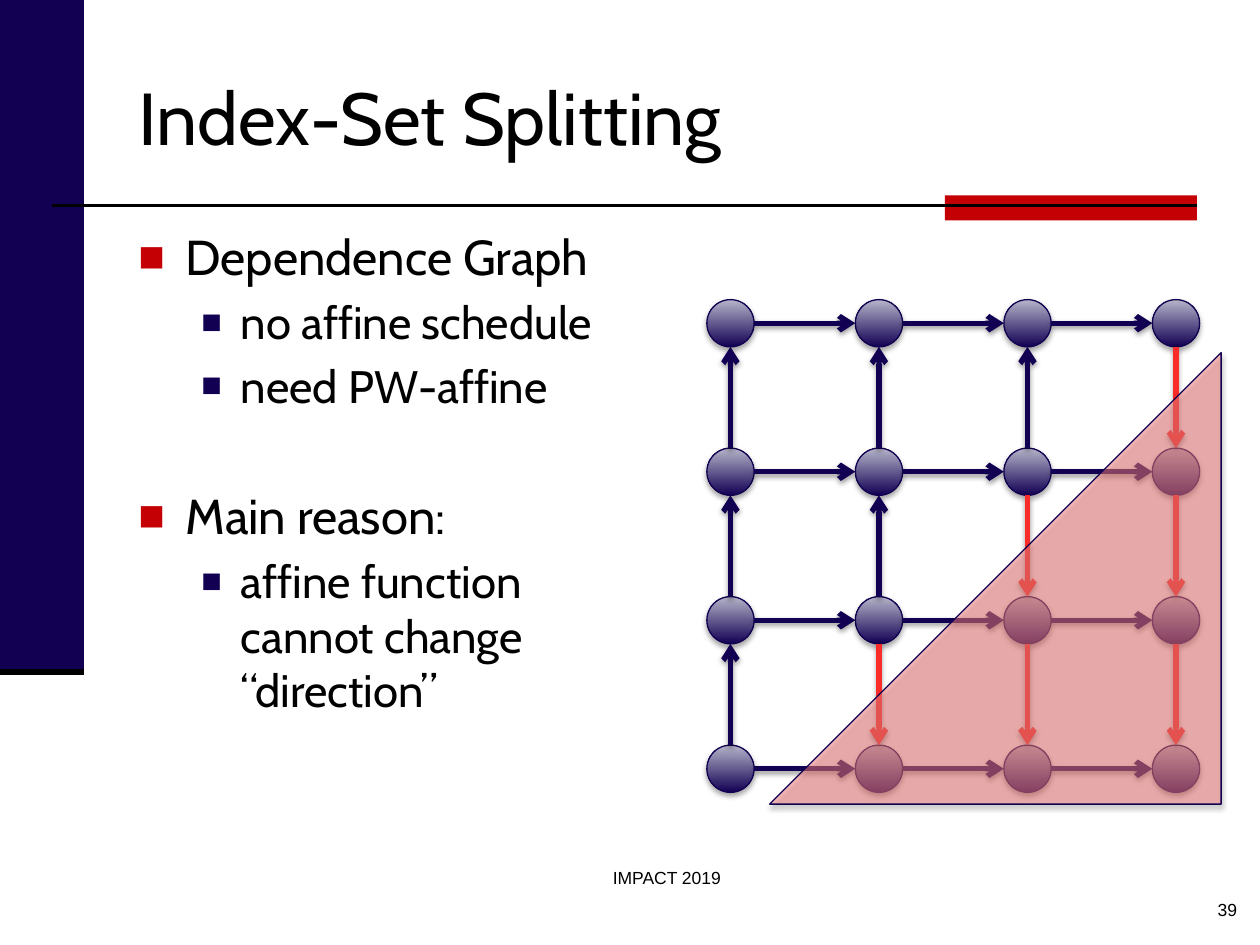
from lxml import etree
from pptx import Presentation
from pptx.dml.color import RGBColor
from pptx.enum.shapes import MSO_CONNECTOR, MSO_SHAPE
from pptx.enum.text import MSO_ANCHOR, MSO_AUTO_SIZE, PP_ALIGN
from pptx.oxml import parse_xml
from pptx.oxml.ns import nsdecls, qn
from pptx.util import Pt

NAVY = RGBColor(0x12, 0x00, 0x53)
OUTLINE = RGBColor(0x12, 0x00, 0x51)
LAVENDER = RGBColor(0xB6, 0xB5, 0xCA)
CRIMSON = RGBColor(0xC4, 0x00, 0x05)
RED = RGBColor(0xF9, 0x2C, 0x29)
PINK = RGBColor(0xFB, 0x80, 0x7F)
BLACK = RGBColor(0, 0, 0)
STRAIGHT = MSO_CONNECTOR.STRAIGHT
RECT, OVAL, TRIANGLE = MSO_SHAPE.RECTANGLE, MSO_SHAPE.OVAL, MSO_SHAPE.RIGHT_TRIANGLE
LEFT, CENTER, RIGHT = PP_ALIGN.LEFT, PP_ALIGN.CENTER, PP_ALIGN.RIGHT

GRID_SIZE = 4
NODE = 27
BULLETS = [
    ("Dependence Graph", 0, 0),
    ("no affine schedule", 1, 5),
    ("need PW-affine", 1, 5),
    ("Main reason:", 0, 42),
    ("affine function\vcannot change\v“direction”", 1, 5),
]
LEVELS = [
    dict(size=28, indent=27, hang=27, bullet=CRIMSON, bullet_size=90),
    dict(size=26, indent=58.5, hang=22.5, bullet=NAVY, bullet_size=75),
]


def add_effects(s, alpha=None, dist=1.8):
    shadow = ""
    if alpha:
        shadow = (f'<a:outerShdw blurRad="{Pt(3.1)}" dist="{Pt(dist)}" dir="5400000" '
                  f'rotWithShape="0"><a:srgbClr val="000000">'
                  f'<a:alpha val="{alpha * 1000}"/></a:srgbClr></a:outerShdw>')
    s._element.spPr.append(
        parse_xml(f'<a:effectLst {nsdecls("a")}>{shadow}</a:effectLst>'))


def add_bullet(p, indent, hang, color, percent):
    pPr = p._p.get_or_add_pPr()
    pPr.set("marL", str(Pt(indent)))
    pPr.set("indent", str(-Pt(hang)))
    clr = etree.SubElement(pPr, qn("a:buClr"))
    etree.SubElement(clr, qn("a:srgbClr"), val=str(color))
    etree.SubElement(pPr, qn("a:buSzPct"), val=str(percent * 1000))
    etree.SubElement(pPr, qn("a:buFont"), typeface="Arial")
    etree.SubElement(pPr, qn("a:buChar"), char="■")


def write_text(p, text, size=10, font="Arial", color=BLACK, align=LEFT, before=0,
               indent=0, hang=0, bullet=None, bullet_size=100):
    if bullet is not None:
        add_bullet(p, indent, hang, bullet, bullet_size)
    p.text = text
    p.alignment = align
    p.space_before = Pt(before)
    for r in p.runs:
        r.font.size = Pt(size)
        r.font.name = font
        r.font.color.rgb = color


def add_text_frame(slide, x, y, w, h):
    tf = slide.shapes.add_textbox(Pt(x), Pt(y), Pt(w), Pt(h)).text_frame
    tf.word_wrap = True
    return tf


def add_bar(slide, x, y, w, h, color):
    s = slide.shapes.add_shape(RECT, Pt(x), Pt(y), Pt(w), Pt(h))
    s.shadow.inherit = False
    s.fill.solid()
    s.fill.fore_color.rgb = color
    s.line.fill.background()


def add_line(slide, x1, y1, x2, y2, color, width):
    s = slide.shapes.add_connector(STRAIGHT, Pt(x1), Pt(y1), Pt(x2), Pt(y2))
    s.line.color.rgb = color
    s.line.width = Pt(width)
    return s


def add_arrow(slide, x1, y1, x2, y2, color):
    s = add_line(slide, x1, y1, x2, y2, color, 3)
    etree.SubElement(s.line._get_or_add_ln(), qn("a:tailEnd"), type="arrow")
    add_effects(s, alpha=38, dist=1.6)


def add_node(slide, x, y):
    s = slide.shapes.add_shape(OVAL, Pt(x), Pt(y), Pt(NODE), Pt(NODE))
    s.fill.gradient()
    s.fill.gradient_angle = 90
    for stop, color in zip(s.fill.gradient_stops, (NAVY, LAVENDER)):
        stop.color.rgb = color
    s.line.color.rgb = OUTLINE
    s.line.width = Pt(0.75)
    add_effects(s, alpha=35)


def add_decoration(slide, x, y, w):
    add_bar(slide, x, y, 48, 384, NAVY)
    add_bar(slide, x + w - 180, y + 111.6, 144, 14.4, CRIMSON)
    for line in ((x + 30, y + 117.5, x + w - 36, y + 117.5, BLACK, 1.5),
                 (x, y + 384, x + 48, y + 384, BLACK, 3.5)):
        add_effects(add_line(slide, *line))


def add_title(slide, x, y, w, h):
    s = slide.shapes.title
    s.left, s.top, s.width, s.height = Pt(x), Pt(y), Pt(w), Pt(h)
    tf = s.text_frame
    tf.auto_size = MSO_AUTO_SIZE.NONE
    tf.vertical_anchor = MSO_ANCHOR.MIDDLE
    write_text(tf.paragraphs[0], "Index-Set Splitting", size=42, font="Cabin")


def add_body(slide, x, y, w, h):
    tf = add_text_frame(slide, x, y, w, h)
    for i, (text, level, before) in enumerate(BULLETS):
        p = tf.add_paragraph() if i else tf.paragraphs[0]
        p.level = level
        write_text(p, text, font="Cabin", before=before, **LEVELS[level])


def add_dependence_graph(slide, x, y, size):
    pitch = (size - NODE) / (GRID_SIZE - 1)
    half = NODE / 2
    cells = [(row, col) for row in range(GRID_SIZE) for col in range(GRID_SIZE)]
    for row, col in cells:
        add_node(slide, x + col * pitch, y + row * pitch)
    for row, col in cells:
        cx, cy = x + col * pitch + half, y + row * pitch + half
        if col < GRID_SIZE - 1:
            add_arrow(slide, cx + half, cy, cx + pitch - half, cy, NAVY)
        if row < GRID_SIZE - 1:
            upper, lower = cy + half, cy + pitch - half
            if row + col >= GRID_SIZE - 1:
                add_arrow(slide, cx, upper, cx, lower, RED)
            else:
                add_arrow(slide, cx, lower, cx, upper, NAVY)


def add_split_region(slide, x, y, size):
    s = slide.shapes.add_shape(TRIANGLE, Pt(x), Pt(y), Pt(size), Pt(size))
    s.rotation = 270
    s.fill.solid()
    s.fill.fore_color.rgb = PINK
    color = s._element.spPr.find(qn("a:solidFill")).find(qn("a:srgbClr"))
    etree.SubElement(color, qn("a:alpha"), val="50000")
    s.line.color.rgb = OUTLINE
    s.line.width = Pt(0.75)
    add_effects(s, alpha=35)


def add_footer(slide, x, y, w, h, text, align):
    tf = add_text_frame(slide, x, y, w, h)
    write_text(tf.paragraphs[0], text, align=align)


def main():
    prs = Presentation()
    prs.slide_width, prs.slide_height = Pt(720), Pt(540)
    slide = prs.slides.add_slide(prs.slide_layouts[5])
    add_decoration(slide, 0, 0, 720)
    add_title(slide, 72, 21.6, 612, 90)
    add_body(slide, 72, 126, 612, 356.4)
    add_dependence_graph(slide, 403.9, 171.2, 281.6)
    add_split_region(slide, 439.8, 201.5, 258)
    add_footer(slide, 264, 492, 234, 36, "IMPACT 2019", CENTER)
    add_footer(slide, 564, 510, 150, 18, "39", RIGHT)
    prs.save("out.pptx")


if __name__ == "__main__":
    main()
